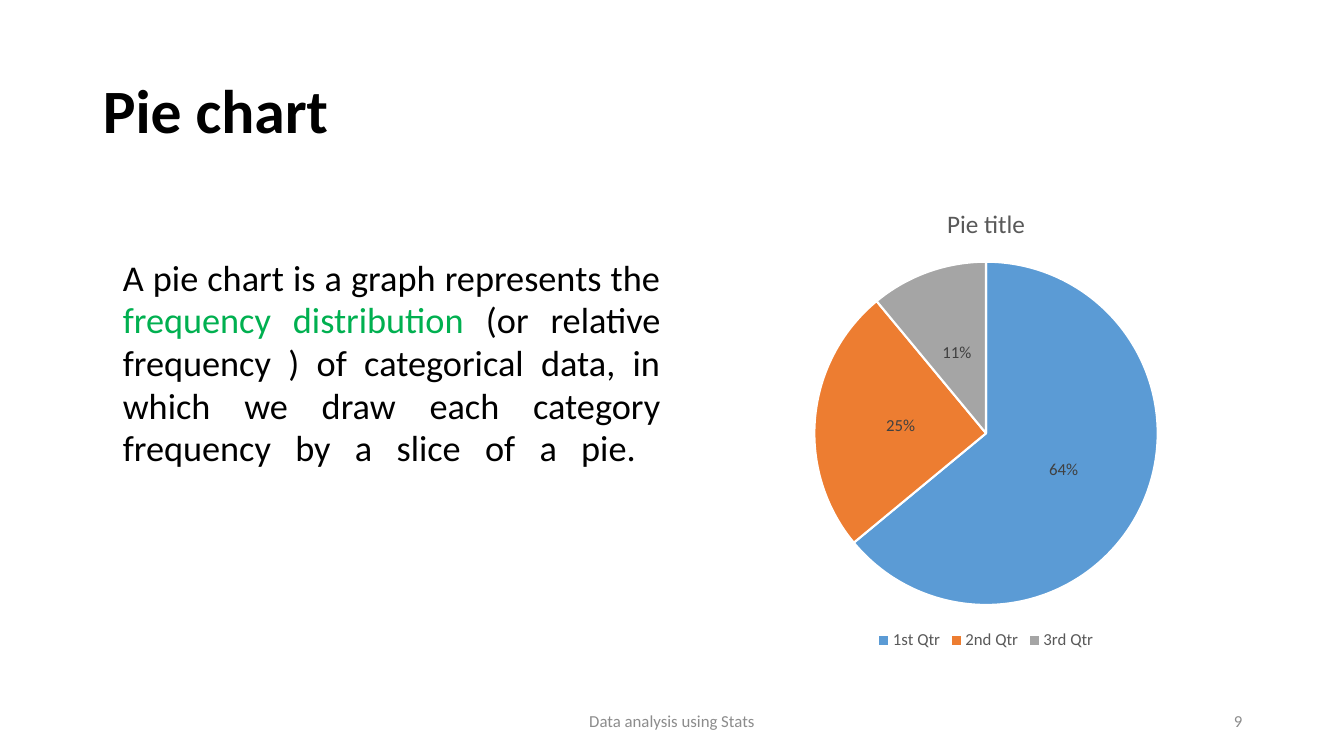
"""Builds a slide that explains the pie chart beside a sample one."""
from pptx import Presentation
from pptx.chart.data import CategoryChartData
from pptx.dml.color import RGBColor
from pptx.enum.chart import XL_CHART_TYPE, XL_LABEL_POSITION, XL_LEGEND_POSITION
from pptx.enum.text import MSO_ANCHOR, PP_ALIGN
from pptx.util import Inches, Pt

PIE = XL_CHART_TYPE.PIE
CENTER_LABEL = XL_LABEL_POSITION.CENTER
BOTTOM = XL_LEGEND_POSITION.BOTTOM
TOP, MIDDLE = MSO_ANCHOR.TOP, MSO_ANCHOR.MIDDLE
LEFT, CENTER, RIGHT, JUSTIFY = (
    PP_ALIGN.LEFT, PP_ALIGN.CENTER, PP_ALIGN.RIGHT, PP_ALIGN.JUSTIFY)

FONT = "Calibri"
BLACK, GREEN, GREY, WHITE = "000000", "00B050", "8C8C8C", "FFFFFF"
CHART_GREY, LABEL_GREY = "595959", "404040"

WIDTH, HEIGHT = 13.33, 7.5
MARGIN = 0.92
CONTENT = WIDTH - 2 * MARGIN + 0.01
HALF = 6.65
FOOT_TOP, FOOT_HEIGHT = 6.95, 0.4
FOOT_WIDTH, NUMBER_WIDTH = 4.5, 3

TITLE = "Pie chart"
BODY = [
    ("A pie chart is a graph represents the ", BLACK),
    ("frequency distribution ", GREEN),
    ("(or relative frequency ) of categorical data, in which we draw "
     "each category frequency by a slice of a pie. \v", BLACK),
]
FOOTER, NUMBER = "Data analysis using Stats", "9"
CHART_TITLE = "Pie title"
SLICES = [("1st Qtr", 64, "5B9BD5"), ("2nd Qtr", 25, "ED7D31"),
          ("3rd Qtr", 11, "A5A5A5")]


def rgb(value):
    """Return the colour for a hex string."""
    return RGBColor.from_string(value)


def style(font, size, color, bold=False):
    """Format a font."""
    font.name, font.size, font.bold = FONT, Pt(size), bold
    font.color.rgb = rgb(color)


def write(tf, runs, size=12, bold=False, align=LEFT, anchor=MIDDLE, spacing=1.0):
    """Fill a text frame with one paragraph of (text, colour) runs."""
    tf.word_wrap = True
    tf.vertical_anchor = anchor
    p = tf.paragraphs[0]
    p.alignment, p.line_spacing = align, spacing
    p.space_before = Pt(0)
    for text, color in runs:
        for i, part in enumerate(text.split("\v")):
            if i:
                p.add_line_break()
            if part:
                r = p.add_run()
                r.text = part
                style(r.font, size, color, bold)


def add_text(s, box, runs, **fmt):
    """Add a text box."""
    write(s.shapes.add_textbox(*map(Inches, box)).text_frame, runs, **fmt)


def add_pie(s, box):
    """Add the pie chart with its title, legend and percent labels."""
    data = CategoryChartData()
    data.categories = [name for name, _, _ in SLICES]
    data.add_series("Series 1", [value for _, value, _ in SLICES])
    chart = s.shapes.add_chart(PIE, *map(Inches, box), data).chart
    style(chart.font, 10, BLACK)

    chart.has_title = True
    p = chart.chart_title.text_frame.paragraphs[0]
    r = p.add_run()
    r.text = CHART_TITLE
    style(r.font, 18, CHART_GREY)

    chart.has_legend = True
    chart.legend.position = BOTTOM
    chart.legend.include_in_layout = False
    style(chart.legend.font, 12, CHART_GREY)

    plot = chart.plots[0]
    plot.vary_by_categories = True
    series = plot.series[0]
    for i, (_, _, color) in enumerate(SLICES):
        fmt = series.points[i].format
        fmt.fill.solid()
        fmt.fill.fore_color.rgb = rgb(color)
        fmt.line.color.rgb = rgb(WHITE)
        fmt.line.width = Pt(1.5)
    labels = series.data_labels
    labels.show_percentage, labels.show_value = True, False
    labels.number_format, labels.number_format_is_linked = "0%", False
    labels.position = CENTER_LABEL
    style(labels.font, 12, LABEL_GREY)


def main():
    """Build and save the slide."""
    prs = Presentation()
    prs.slide_width, prs.slide_height = Inches(WIDTH), Inches(HEIGHT)
    s = prs.slides.add_slide(prs.slide_layouts[5])

    title = s.shapes.title
    title.left, title.top = Inches(MARGIN), Inches(0.4)
    title.width, title.height = Inches(CONTENT), Inches(1.45)
    write(title.text_frame, [(TITLE, BLACK)], size=44, bold=True, spacing=0.9)

    add_text(s, ((WIDTH - FOOT_WIDTH) / 2, FOOT_TOP, FOOT_WIDTH, FOOT_HEIGHT),
             [(FOOTER, GREY)], align=CENTER)
    add_text(s, (MARGIN + CONTENT - NUMBER_WIDTH, FOOT_TOP, NUMBER_WIDTH, FOOT_HEIGHT),
             [(NUMBER, GREY)], align=RIGHT)
    add_pie(s, (HALF, 1.86, 6.26, 4.63))
    add_text(s, (MARGIN + 0.2, 2.5, HALF - MARGIN - 0.2, 2.79), BODY,
             size=25.9, align=JUSTIFY, anchor=TOP, spacing=0.98)
    prs.save("out.pptx")


if __name__ == "__main__":
    main()
